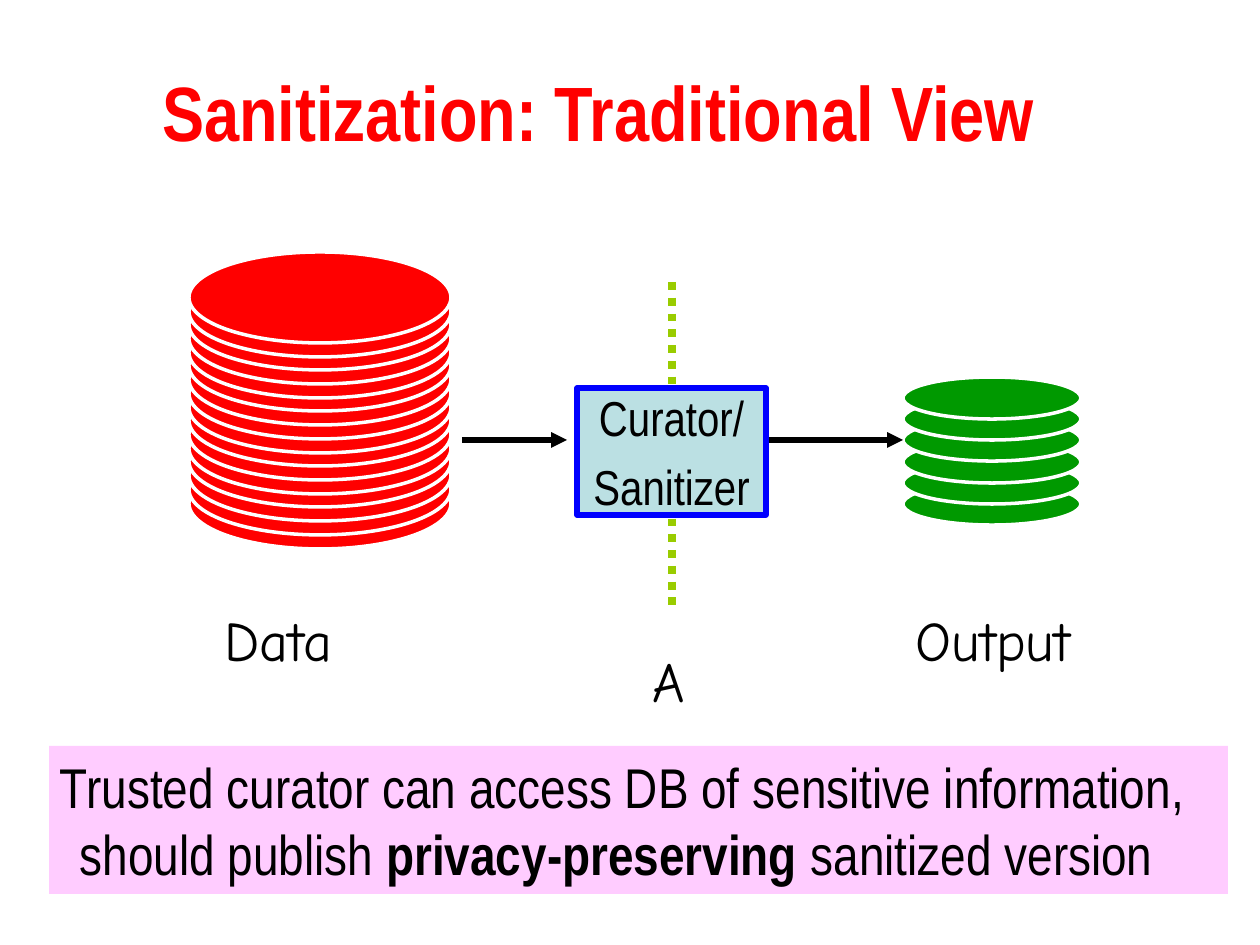
from dataclasses import dataclass

from lxml import etree
from pptx import Presentation
from pptx import util as u
from pptx.dml.color import RGBColor
from pptx.enum import dml, shapes, text
from pptx.oxml import ns

PX_PER_INCH = 126


@dataclass(frozen=True)
class Theme:
    red: str = "FF0000"
    green: str = "009900"
    lime: str = "99CC00"
    blue: str = "0000FF"
    teal: str = "BBE0E3"
    pink: str = "FFCCFF"
    black: str = "000000"
    white: str = "FFFFFF"
    body_font: str = "Arial Narrow"
    label_font: str = "Comic Neue"
    title_size: int = 44
    text_size: int = 32
    box_size: int = 28


def px(n):
    return u.Inches(n / PX_PER_INCH)


def rgb(value):
    return RGBColor.from_string(value)


def assign(obj, values):
    for name, value in values.items():
        setattr(obj, name, value)


class Deck:
    def __init__(self, theme):
        self.theme = theme
        self.prs = Presentation()
        assign(self.prs, {"slide_width": px(1260), "slide_height": px(945)})
        self.s = self.prs.slides.add_slide(self.prs.slide_layouts[6])

    def shape(self, kind, box, fill, line=None, width=0, parent=None):
        sp = (parent or self.s).shapes.add_shape(kind, *map(px, box))
        sp.shadow.inherit = False
        sp.fill.solid()
        sp.fill.fore_color.rgb = rgb(fill)
        if line:
            sp.line.color.rgb = rgb(line)
            sp.line.width = u.Pt(width)
        else:
            sp.line.fill.background()
        return sp

    def fill_text(self, sp, lines, font, frame=None, para=None):
        """Each line is a list of (text, bold) runs in its own paragraph."""
        tf = sp.text_frame
        assign(tf, {"word_wrap": True, **(frame or {})})
        color = font["color"]
        style = {k: v for k, v in font.items() if k != "color"}
        for i, runs in enumerate(lines):
            p = tf.paragraphs[0] if i == 0 else tf.add_paragraph()
            assign(p, para or {})
            for words, bold in runs:
                if words == "\n":
                    p.add_line_break()
                    continue
                r = p.add_run()
                r.text = words
                assign(r.font, {**style, "bold": bold})
                r.font.color.rgb = rgb(color)

    def label(self, box, words, font, bold=False, frame=None, para=None):
        sp = self.s.shapes.add_textbox(*map(px, box))
        self.fill_text(sp, [[(words, bold)]], font, frame, para)

    def stack(self, left, top, width, height, count, step, fill):
        """Pile of discs, drawn from the bottom one up."""
        group = self.s.shapes.add_group_shape()
        for i in reversed(range(count)):
            box = (left, round(top + i * step), width, height)
            self.shape(shapes.MSO_SHAPE.OVAL, box, fill, self.theme.white, 2, group)

    def line(self, start, end, color, width, dash=None, arrow=False):
        c = self.s.shapes.add_connector(
            shapes.MSO_CONNECTOR.STRAIGHT, *map(px, start + end))
        c.line.color.rgb = rgb(color)
        assign(c.line, {"width": u.Pt(width), "dash_style": dash})
        props = c._element.spPr
        if arrow:
            etree.SubElement(props.find(ns.qn("a:ln")), ns.qn("a:tailEnd"), type="triangle")
        etree.SubElement(props, ns.qn("a:effectLst"))


def main():
    t = Theme()
    d = Deck(t)
    rect = shapes.MSO_SHAPE.RECTANGLE
    middle = {"vertical_anchor": text.MSO_ANCHOR.MIDDLE}
    center = {"alignment": text.PP_ALIGN.CENTER}
    body = {"name": t.body_font, "size": u.Pt(t.text_size), "color": t.black}
    hand = {**body, "name": t.label_font}

    # Title
    d.label((32, 32, 1134, 158), "Sanitization: Traditional View",
            {**body, "size": u.Pt(t.title_size), "color": t.red},
            True, middle, center)

    # Output discs, trust boundary, data discs
    d.stack(903, 377, 178, 42, 6, 21.2, t.green)
    d.line((672, 282), (672, 609), t.lime, 4.5, dml.MSO_LINE.ROUND_DOT)
    d.stack(189, 252, 262, 91, 16, 13.7, t.red)

    # Curator with its arrows
    d.line((766, 440), (903, 440), t.black, 3, arrow=True)
    sp = d.shape(rect, (577, 388, 189, 127), t.teal, t.blue, 3)
    d.fill_text(sp, [[("Curator/", False)], [("Sanitizer", False)]],
                {**body, "size": u.Pt(t.box_size)},
                {**middle, "word_wrap": False},
                {**center, "space_before": u.Pt(5.6)})
    d.line((462, 440), (567, 440), t.black, 3, arrow=True)

    # Labels
    d.label((903, 599, 284, 80), "Output", hand)
    d.label((116, 599, 325, 80), "Data", hand, para=center)
    d.label((640, 640, 95, 80), "A", hand)

    # Summary band, its text set a little left of centre
    sp = d.shape(rect, (49, 746, 1179, 148), t.pink)
    d.fill_text(sp, [[("Trusted curator can access DB of sensitive information,", False),
                      ("\n", False),
                      ("should publish ", False),
                      ("privacy-preserving", True),
                      (" sanitized version ", False)]],
                body, {**middle, "word_wrap": False, "margin_right": px(44)}, center)

    d.prs.save("out.pptx")


if __name__ == "__main__":
    main()
